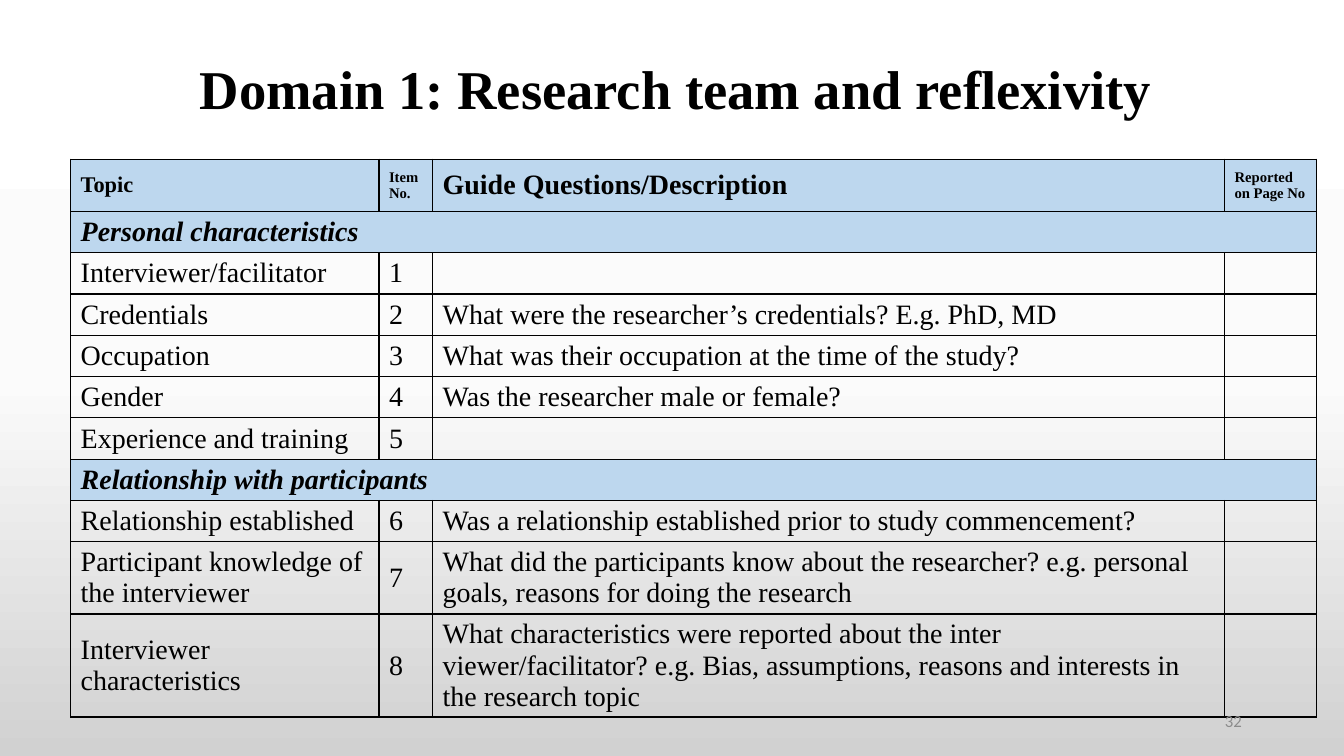
from copy import deepcopy
from dataclasses import dataclass

from lxml.etree import SubElement
from pptx import Presentation
from pptx.dml.color import RGBColor as RGB
from pptx.enum.text import MSO_ANCHOR as Anchor, PP_ALIGN as Align
from pptx.oxml.ns import qn
from pptx.util import Cm, Pt


@dataclass(frozen=True)
class Theme:
    serif: str = "Times New Roman"
    sans: str = "Calibri"
    ink: str = "000000"
    muted: str = "8C8C8C"
    band: str = "BDD7EE"
    backdrop: tuple = ((0, "FFFFFF"), (0.5, "FBFBFB"), (1, "D1D1D1"))
    title: float = 39
    body: float = 20
    topic: float = 16
    small: float = 10.5
    number: float = 12


T = Theme()

COLUMN_WIDTHS = (7.77, 1.35, 19.96, 2.31)
HEADER_HEIGHT = 1.32
LINE_HEIGHT, ROW_PADDING = 0.78, 0.26
RIGHT_MARGIN = 0.33
HEADER = (
    ("Topic", T.topic),
    ("Item No.", T.small),
    ("Guide Questions/Description", T.body),
    ("Reported on Page No", T.small),
)
# Each section holds (topic, guide question, number of text lines).
SECTIONS = (
    ("Personal characteristics", (
        ("Interviewer/facilitator", "", 1),
        ("Credentials", "What were the researcher’s credentials? E.g. PhD, MD", 1),
        ("Occupation", "What was their occupation at the time of the study?", 1),
        ("Gender", "Was the researcher male or female?", 1),
        ("Experience and training", "", 1),
    )),
    ("Relationship with participants", (
        ("Relationship established",
         "Was a relationship established prior to study commencement?", 1),
        ("Participant knowledge of the interviewer",
         "What did the participants know about the researcher? "
         "e.g. personal goals, reasons for doing the research", 2),
        ("Interviewer characteristics",
         "What characteristics were reported about the inter viewer/facilitator? "
         "e.g. Bias, assumptions, reasons and interests in the research topic", 3),
    )),
)


def set_background(s):
    """Fill the slide with a top-to-bottom gradient of the theme's stops."""
    fill = s.background.fill
    fill.gradient()
    fill.gradient_angle = 270
    stop_list = s._element.find(".//" + qn("a:gsLst"))
    while len(stop_list) < len(T.backdrop):
        stop_list.append(deepcopy(stop_list[-1]))
    for stop, (position, color) in zip(fill.gradient_stops, T.backdrop):
        stop.position = position
        stop.color.rgb = RGB.from_string(color)


def write(p, text, size, name=T.serif, color=T.ink, bold=False, italic=False):
    p.text = text
    font = p.font
    font.name, font.size = name, Pt(size)
    font.bold, font.italic = bold, italic
    font.color.rgb = RGB.from_string(color)


def add_text(s, box, text, size, align, **style):
    tf = s.shapes.add_textbox(*map(Cm, box)).text_frame
    tf.word_wrap = True
    tf.vertical_anchor = Anchor.MIDDLE
    p = tf.paragraphs[0]
    p.alignment = align
    write(p, text, size, **style)
    return p


def set_borders(cell):
    tc_pr = cell._tc.get_or_add_tcPr()
    for i, side in enumerate(("a:lnL", "a:lnR", "a:lnT", "a:lnB")):
        line = SubElement(tc_pr, qn(side), w=str(Pt(1)))
        solid = SubElement(line, qn("a:solidFill"))
        SubElement(solid, qn("a:srgbClr"), val=T.ink)
        tc_pr.insert(i, line)


def fill_cell(cell, text="", size=T.body, band=False, **style):
    """Style one cell; without vertical margins the row height alone rules."""
    cell.vertical_anchor = Anchor.MIDDLE
    cell.margin_top = cell.margin_bottom = 0
    if band:
        cell.fill.solid()
        cell.fill.fore_color.rgb = RGB.from_string(T.band)
    else:
        cell.fill.background()
        cell.margin_right = Cm(RIGHT_MARGIN)
    set_borders(cell)
    if text:
        write(cell.text_frame.paragraphs[0], text, size, bold=band, **style)


def row_height(lines):
    return Cm(ROW_PADDING + lines * LINE_HEIGHT)


def add_checklist(s, left, top):
    row_count = 1 + sum(1 + len(items) for _, items in SECTIONS)
    table = s.shapes.add_table(row_count, len(COLUMN_WIDTHS), Cm(left), Cm(top),
                               Cm(sum(COLUMN_WIDTHS)), Cm(HEADER_HEIGHT)).table
    table.first_row = table.horz_banding = False
    for column, width in zip(table.columns, COLUMN_WIDTHS):
        column.width = Cm(width)

    rows = iter(table.rows)
    row = next(rows)
    row.height = Cm(HEADER_HEIGHT)
    for cell, (text, size) in zip(row.cells, HEADER):
        fill_cell(cell, text, size, band=True)

    item_number = 0
    for section, items in SECTIONS:
        row = next(rows)
        row.height = row_height(1)
        cells = list(row.cells)
        for cell, text in zip(cells, (section, "", "", "")):
            fill_cell(cell, text, band=True, italic=True)
        cells[0].merge(cells[-1])
        for topic, question, lines in items:
            item_number += 1
            row = next(rows)
            row.height = row_height(lines)
            for cell, text in zip(row.cells, (topic, str(item_number), question, "")):
                fill_cell(cell, text)


def main():
    prs = Presentation()
    prs.slide_width, prs.slide_height = Cm(33.87), Cm(19.05)
    s = prs.slides.add_slide(prs.slide_layouts[6])
    set_background(s)
    title = add_text(s, (1.24, 0.48, 31.57, 3.68),
                     "Domain 1: Research team and reflexivity",
                     T.title, Align.CENTER, bold=True)
    title.line_spacing = 0.9
    add_checklist(s, 1.78, 4.01)
    add_text(s, (23.93, 17.65, 7.62, 1.02), "32", T.number, Align.RIGHT,
             name=T.sans, color=T.muted)
    prs.save("out.pptx")


if __name__ == "__main__":
    main()
